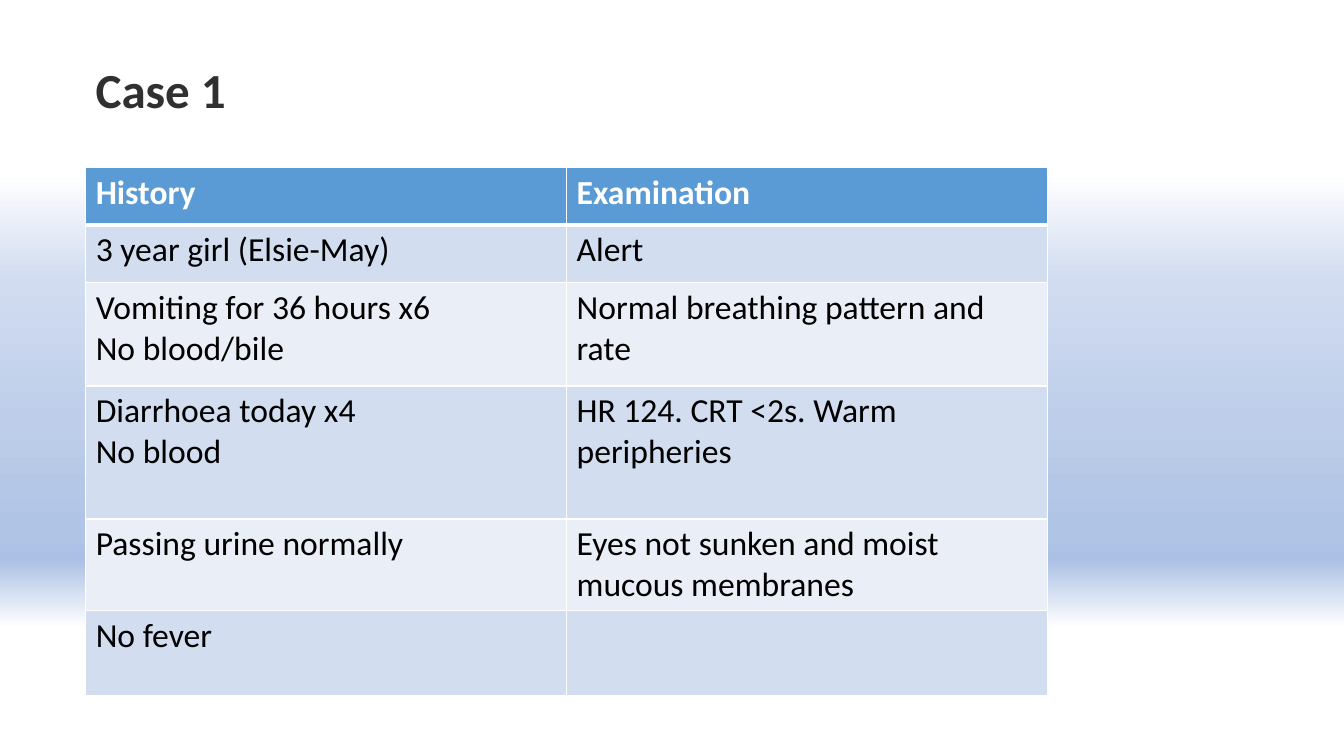
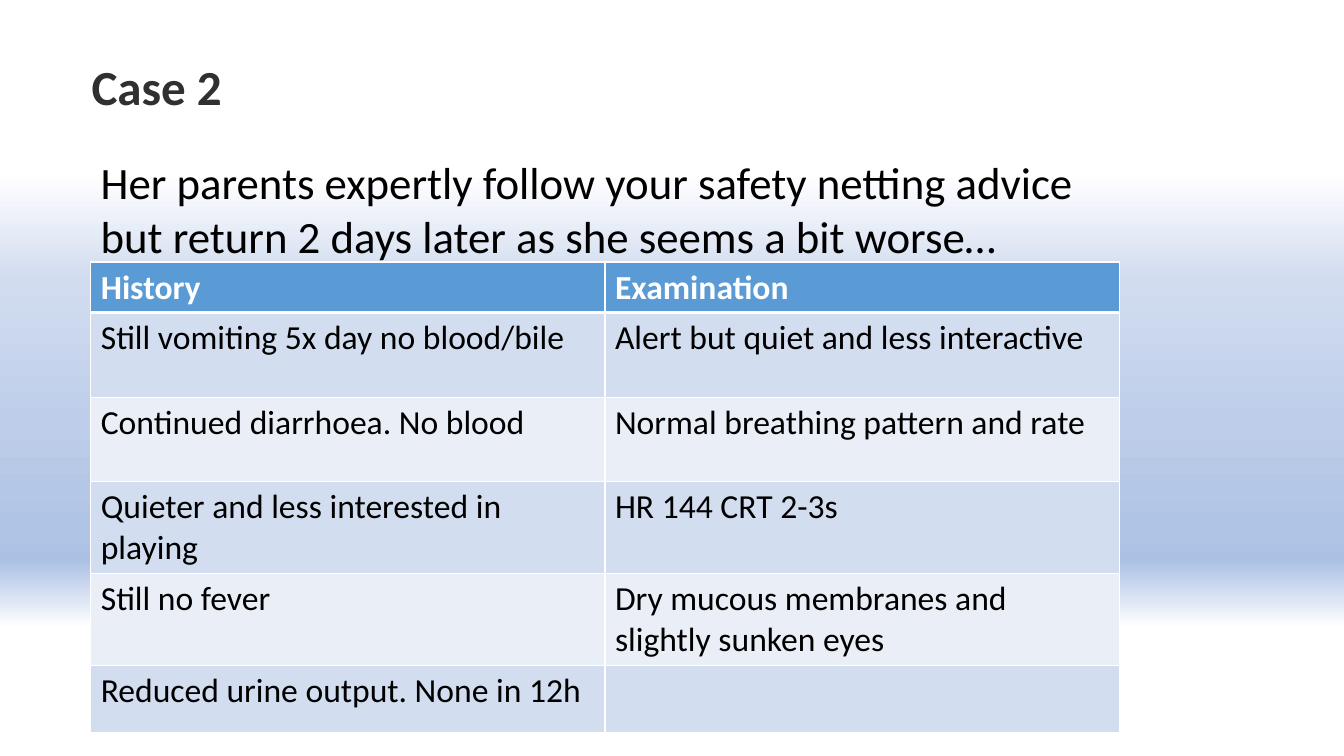
"""Build two paediatric case slides, each with a history and examination table."""
from lxml import etree
from pptx import Presentation
from pptx.dml.color import RGBColor
from pptx.enum.text import MSO_ANCHOR, MSO_AUTO_SIZE
from pptx.oxml.ns import qn
from pptx.util import Inches, Pt

MIDDLE = MSO_ANCHOR.MIDDLE
GROW = MSO_AUTO_SIZE.SHAPE_TO_FIT_TEXT
FONT = "Calibri"
BLANK_LAYOUT = 6
COLORS = {
    "title": "303030",
    "text": "000000",
    "white": "FFFFFF",
    "header": "5B9BD5",
    "odd": "D2DEEF",
    "even": "EAEFF7",
}
BACKDROP = [
    (23, "FFFFFF"), (37, "D1DCF0"), (56, "BECEEA"), (65, "B5C7E7"),
    (69, "B0C4E6"), (72, "AEC2E5"), (73, "ADC1E5"), (73, "ABC0E4"),
    (74, "ABC0E4"), (83, "FFFFFF"),
]
HEADINGS = ("History", "Examination")


class CaseDeck:
    """Hold the shared style and the slide being filled."""

    def __init__(self):
        self.prs = Presentation()
        self.prs.slide_width = Inches(13.33)
        self.prs.slide_height = Inches(7.5)
        self.slide = None
        self.paint_backdrop()

    def paint_backdrop(self):
        """Give the master its vertical blue gradient."""
        master = self.prs.slide_master
        fill = master.background.fill
        fill.gradient()
        fill.gradient_angle = 270
        stops = next(master.element.iter(qn("a:gsLst")))
        for stop in list(stops):
            stops.remove(stop)
        for percent, color in BACKDROP:
            stop = etree.SubElement(stops, qn("a:gs"), pos=str(percent * 1000))
            etree.SubElement(stop, qn("a:srgbClr"), val=color)

    def add_slide(self):
        """Start a new slide."""
        layout = self.prs.slide_layouts[BLANK_LAYOUT]
        self.slide = self.prs.slides.add_slide(layout)

    def add_text(self, paragraph, text, size, color, bold=False):
        """Add one styled run to a paragraph."""
        run = paragraph.add_run()
        run.text = text
        run.font.name = FONT
        run.font.size = Pt(size)
        run.font.bold = bold
        run.font.color.rgb = RGBColor.from_string(COLORS[color])

    def add_frame(self, left, top, width, height):
        """Add a wrapping text box and return its text frame."""
        box = self.slide.shapes.add_textbox(
            Inches(left), Inches(top), Inches(width), Inches(height))
        box.text_frame.word_wrap = True
        return box.text_frame

    def add_title(self, text, left, top):
        """Add the slide title."""
        frame = self.add_frame(left, top, 4.67, 1.2)
        frame.vertical_anchor = MIDDLE
        title = frame.paragraphs[0]
        title.line_spacing = 0.9
        self.add_text(title, text, 35, "title", bold=True)

    def add_lead(self, text, left, top, width, height):
        """Add the introductory sentence."""
        frame = self.add_frame(left, top, width, height)
        frame.auto_size = GROW
        self.add_text(frame.paragraphs[0], text, 32, "text")

    def add_borders(self, cell, row):
        """Draw white cell borders, heavier below the header."""
        properties = cell._tc.get_or_add_tcPr()
        widths = {"lnL": 1, "lnR": 1,
                  "lnT": 3 if row == 1 else 1, "lnB": 3 if row == 0 else 1}
        for side, width in widths.items():
            line = etree.SubElement(properties, qn(f"a:{side}"), w=str(Pt(width)))
            fill = etree.SubElement(line, qn("a:solidFill"))
            etree.SubElement(fill, qn("a:srgbClr"), val=COLORS["white"])

    def add_findings(self, findings, left, top, width, heights):
        """Add the table of history and examination findings."""
        rows = [HEADINGS, *findings]
        table = self.slide.shapes.add_table(
            len(rows), len(HEADINGS), Inches(left), Inches(top),
            Inches(width), Inches(sum(heights))).table
        for column in table.columns:
            column.width = Inches(width / len(HEADINGS))
        for row, (texts, height) in enumerate(zip(rows, heights)):
            table.rows[row].height = Inches(height)
            is_header = row == 0
            band = "header" if is_header else ("even", "odd")[row % 2]
            for column, text in enumerate(texts):
                cell = table.cell(row, column)
                self.add_borders(cell, row)
                cell.fill.solid()
                cell.fill.fore_color.rgb = RGBColor.from_string(COLORS[band])
                frame = cell.text_frame
                for index, line in enumerate(text.splitlines()):
                    paragraph = frame.add_paragraph() if index else frame.paragraphs[0]
                    self.add_text(paragraph, line, 24,
                                  "white" if is_header else "text", bold=is_header)


def main():
    """Build and save both cases."""
    deck = CaseDeck()

    deck.add_slide()
    deck.add_title("Case 1", 0.85, 0.32)
    first_visit = [
        ("3 year girl (Elsie-May)", "Alert"),
        ("Vomiting for 36 hours x6\nNo blood/bile", "Normal breathing pattern and rate"),
        ("Diarrhoea today x4\nNo blood", "HR 124. CRT <2s. Warm peripheries"),
        ("Passing urine normally", "Eyes not sunken and moist mucous membranes"),
        ("No fever", ""),
    ]
    deck.add_findings(first_visit, 0.85, 1.66, 9.54,
                      [0.57, 0.57, 1.03, 1.32, 0.91, 0.84])

    deck.add_slide()
    deck.add_title("Case 2", 0.81, 0.29)
    second_visit = [
        ("Still vomiting 5x day no blood/bile", "Alert but quiet and less interactive"),
        ("Continued diarrhoea. No blood", "Normal breathing pattern and rate"),
        ("Quieter and less interested in playing", "HR 144 CRT 2-3s"),
        ("Still no fever", "Dry mucous membranes and slightly sunken eyes"),
        ("Reduced urine output. None in 12h", ""),
    ]
    deck.add_findings(second_visit, 0.9, 2.6, 10.2,
                      [0.5, 0.84, 0.84, 0.91, 0.91, 0.67])
    deck.add_lead("Her parents expertly follow your safety netting advice "
                  "but return 2 days later as she seems a bit worse…",
                  0.9, 1.49, 10, 1.18)

    deck.prs.save("out.pptx")


if __name__ == "__main__":
    main()
